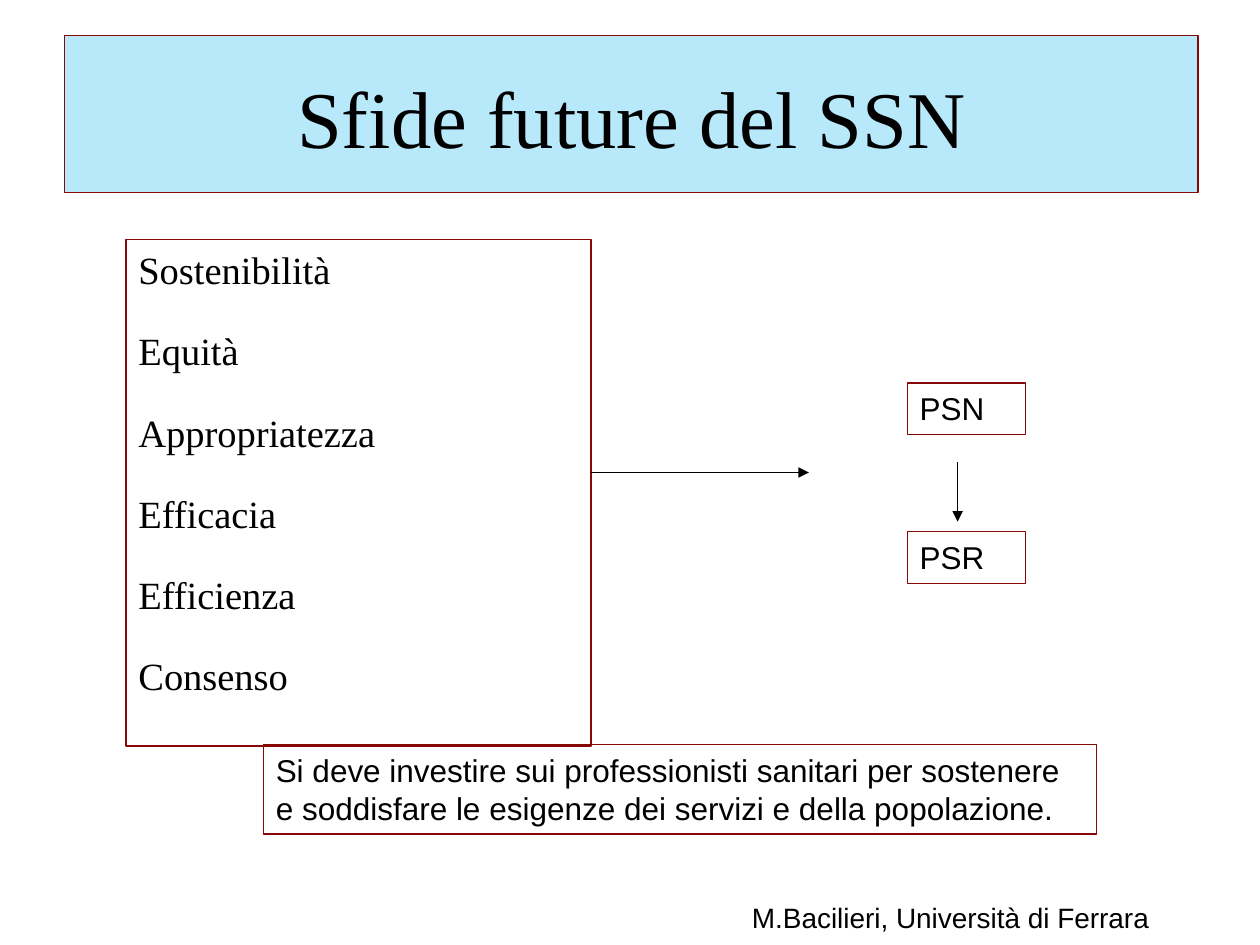
from lxml.etree import SubElement
from pptx import Presentation
from pptx.dml.color import RGBColor
from pptx.enum.shapes import MSO_CONNECTOR, MSO_SHAPE
from pptx.enum.text import MSO_ANCHOR, PP_ALIGN
from pptx.oxml.ns import qn
from pptx.util import Inches, Pt

SKY = RGBColor(0xB8, 0xE9, 0xFA)
WHITE = RGBColor(0xFF, 0xFF, 0xFF)
MAROON = RGBColor(0x86, 0x09, 0x08)
BLACK = RGBColor(0x00, 0x00, 0x00)
SERIF = "Times New Roman"
SANS = "Arial"
COLUMNS, ROWS = 100, 75
CELL = Inches(0.1)
CHALLENGES = ["Sostenibilità", "Equità", "Appropriatezza",
              "Efficacia", "Efficienza", "Consenso"]


def cells(*counts):
    return [round(count * CELL) for count in counts]


def write(frame, lines, font, size, line_height=None, gap=0, align=PP_ALIGN.LEFT):
    frame.word_wrap = True
    frame.text = "\n".join(lines)
    for index, paragraph in enumerate(frame.paragraphs):
        paragraph.alignment = align
        if line_height:
            paragraph.line_spacing = Pt(line_height)
        if index:
            paragraph.space_before = Pt(gap)
        paragraph.font.name = font
        paragraph.font.size = Pt(size)
        paragraph.font.color.rgb = BLACK


def add_box(slide, area, fill=None):
    box = slide.shapes.add_shape(MSO_SHAPE.RECTANGLE, *cells(*area))
    box.shadow.inherit = False
    if fill is None:
        box.fill.background()
    else:
        box.fill.solid()
        box.fill.fore_color.rgb = fill
    box.line.color.rgb = MAROON
    box.line.width = Pt(0.75)
    box.text_frame.vertical_anchor = MSO_ANCHOR.TOP
    return box.text_frame


def add_title(slide, text):
    frame = add_box(slide, (5.1, 2.8, 90, 12.5), SKY)
    frame.vertical_anchor = MSO_ANCHOR.BOTTOM
    frame.margin_top = 0
    frame.margin_bottom = Inches(0.22)
    write(frame, [text], SERIF, 46, line_height=50, align=PP_ALIGN.CENTER)


def add_challenges(slide):
    frame = add_box(slide, (10, 19, 36.9, 40.2), WHITE)
    frame.margin_top = Inches(0.06)
    frame.margin_bottom = 0
    write(frame, CHALLENGES, SERIF, 22, line_height=26, gap=20.4)


def add_label(slide, text, area):
    write(add_box(slide, area), [text], SANS, 18)


def add_arrow(slide, start, end):
    arrow = slide.shapes.add_connector(MSO_CONNECTOR.STRAIGHT, *cells(*start, *end))
    arrow.line.color.rgb = BLACK
    arrow.line.width = Pt(0.75)
    SubElement(arrow.line._get_or_add_ln(), qn("a:tailEnd"), type="triangle")
    SubElement(arrow._element.spPr, qn("a:effectLst"))


def add_author(slide, text):
    author = slide.shapes.add_textbox(*cells(58.7, 71, 41.3, 3.7))
    write(author.text_frame, [text], SANS, 16)


def main():
    presentation = Presentation()
    presentation.slide_width, presentation.slide_height = cells(COLUMNS, ROWS)
    slide = presentation.slides.add_slide(presentation.slide_layouts[6])
    add_title(slide, "Sfide future del SSN")
    add_challenges(slide)
    add_arrow(slide, (46.9, 37.5), (64.2, 37.5))
    add_arrow(slide, (76, 36.7), (76, 41.4))
    for plan, top in (("PSN", 30.4), ("PSR", 42.2)):
        add_label(slide, plan, (72, top, 9.4, 4.1))
    add_label(slide, "Si deve investire sui professionisti sanitari per sostenere "
              "e soddisfare le esigenze dei servizi e della popolazione.",
              (20.9, 59.1, 66.1, 7.1))
    add_author(slide, "M.Bacilieri, Università di Ferrara")
    presentation.save("out.pptx")


if __name__ == "__main__":
    main()
